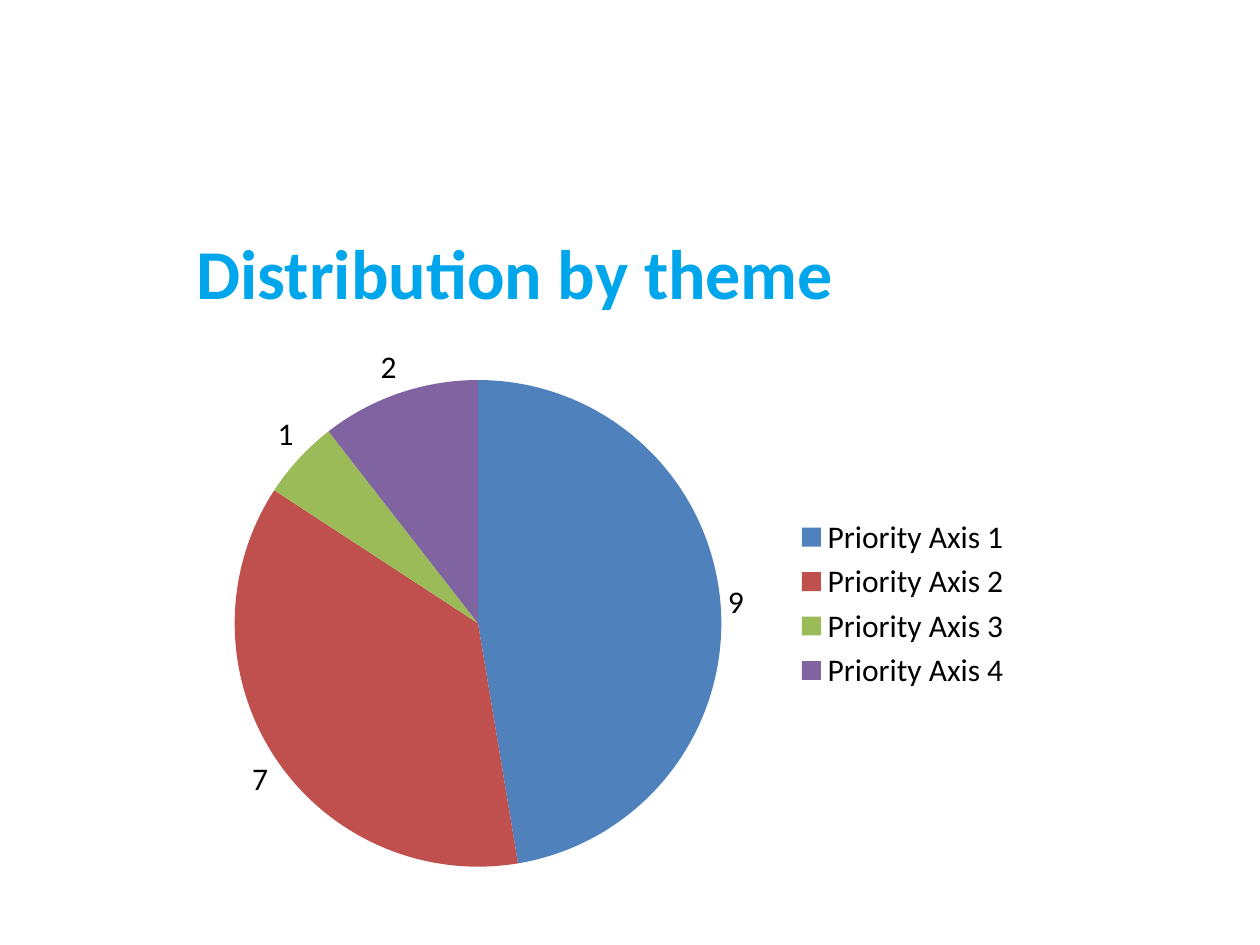
import dataclasses

import lxml.etree
import pptx
import pptx.chart.data
import pptx.dml.color
import pptx.enum.chart
import pptx.enum.text
import pptx.oxml.ns
import pptx.util


@dataclasses.dataclass(frozen=True)
class Theme:
    """Colours, typeface and type sizes of the deck."""
    font: str = "Calibri"
    title_size: int = 40
    chart_size: int = 18
    title_color: str = "00A6EB"
    text_color: str = "000000"
    slices: tuple = ("4F81BD", "C0504D", "9BBB59", "8064A2")


THEME = Theme()
WIDTH, HEIGHT = pptx.util.Inches(10), pptx.util.Inches(7.5)
TITLE_BOX = (0.146, 0.233, 0.709, 0.109)
CHART_BOX = (0.146, 0.343, 0.667, 0.592)
PLOT_SHARES = {"x": 0.06, "y": 0.1, "w": 0.58, "h": 0.87}
AXIS_COUNTS = {
    "Priority Axis 1": 9,
    "Priority Axis 2": 7,
    "Priority Axis 3": 1,
    "Priority Axis 4": 2,
}


def place(box):
    """Turn shares of the slide into left, top, width and height."""
    return [round(share * side) for share, side in zip(box, (WIDTH, HEIGHT) * 2)]


def format_with(target, values):
    """Set each named attribute of the target."""
    for name, value in values.items():
        setattr(target, name, value)


def format_font(font, size, color, bold=False):
    """Apply the theme typeface with a size, colour and weight."""
    format_with(font, {"name": THEME.font, "size": pptx.util.Pt(size), "bold": bold})
    font.color.rgb = pptx.dml.color.RGBColor.from_string(color)


def add_title(page, box, text):
    """Fill and position the title placeholder."""
    title = page.shapes.title
    format_with(title, dict(zip(("left", "top", "width", "height"), place(box))))
    frame = title.text_frame
    format_with(frame, {
        "word_wrap": True,
        "vertical_anchor": pptx.enum.text.MSO_ANCHOR.MIDDLE,
    })
    para = frame.paragraphs[0]
    para.alignment = pptx.enum.text.PP_ALIGN.LEFT
    span = para.add_run()
    span.text = text
    format_font(span.font, THEME.title_size, THEME.title_color, bold=True)


def set_plot_layout(chart, shares):
    """Fix the inner plot area at shares of the chart frame."""
    qn = pptx.oxml.ns.qn
    area = chart.plots[0]._element.getparent()
    for layout in area.findall(qn("c:layout")):
        area.remove(layout)
    layout = lxml.etree.Element(qn("c:layout"))
    area.insert(0, layout)
    manual = lxml.etree.SubElement(layout, qn("c:manualLayout"))
    settings = {"layoutTarget": "inner", "xMode": "edge", "yMode": "edge", **shares}
    for name, value in settings.items():
        lxml.etree.SubElement(manual, qn(f"c:{name}")).set("val", str(value))


def add_theme_pie(page, box, counts):
    """Draw the pie with outside values and a legend on the right."""
    data = pptx.chart.data.CategoryChartData()
    data.categories = list(counts)
    data.add_series("Series 1", list(counts.values()))
    kind = pptx.enum.chart.XL_CHART_TYPE.PIE
    chart = page.shapes.add_chart(kind, *place(box), data).chart
    format_with(chart, {"has_title": False, "has_legend": True})
    format_font(chart.font, THEME.chart_size, THEME.text_color)
    format_with(chart.legend, {
        "position": pptx.enum.chart.XL_LEGEND_POSITION.RIGHT,
        "include_in_layout": False,
    })
    plot = chart.plots[0]
    format_with(plot, {"vary_by_categories": True, "has_data_labels": True})
    format_with(plot.data_labels, {
        "show_value": True,
        "show_percentage": False,
        "position": pptx.enum.chart.XL_LABEL_POSITION.OUTSIDE_END,
    })
    for index, color in enumerate(THEME.slices):
        fill = plot.series[0].points[index].format.fill
        fill.solid()
        fill.fore_color.rgb = pptx.dml.color.RGBColor.from_string(color)
    set_plot_layout(chart, PLOT_SHARES)


def main():
    """Build and save the deck."""
    deck = pptx.Presentation()
    format_with(deck, {"slide_width": WIDTH, "slide_height": HEIGHT})
    page = deck.slides.add_slide(deck.slide_layouts.get_by_name("Title Only"))
    add_title(page, TITLE_BOX, "Distribution by theme")
    add_theme_pie(page, CHART_BOX, AXIS_COUNTS)
    deck.save("out.pptx")


if __name__ == "__main__":
    main()
